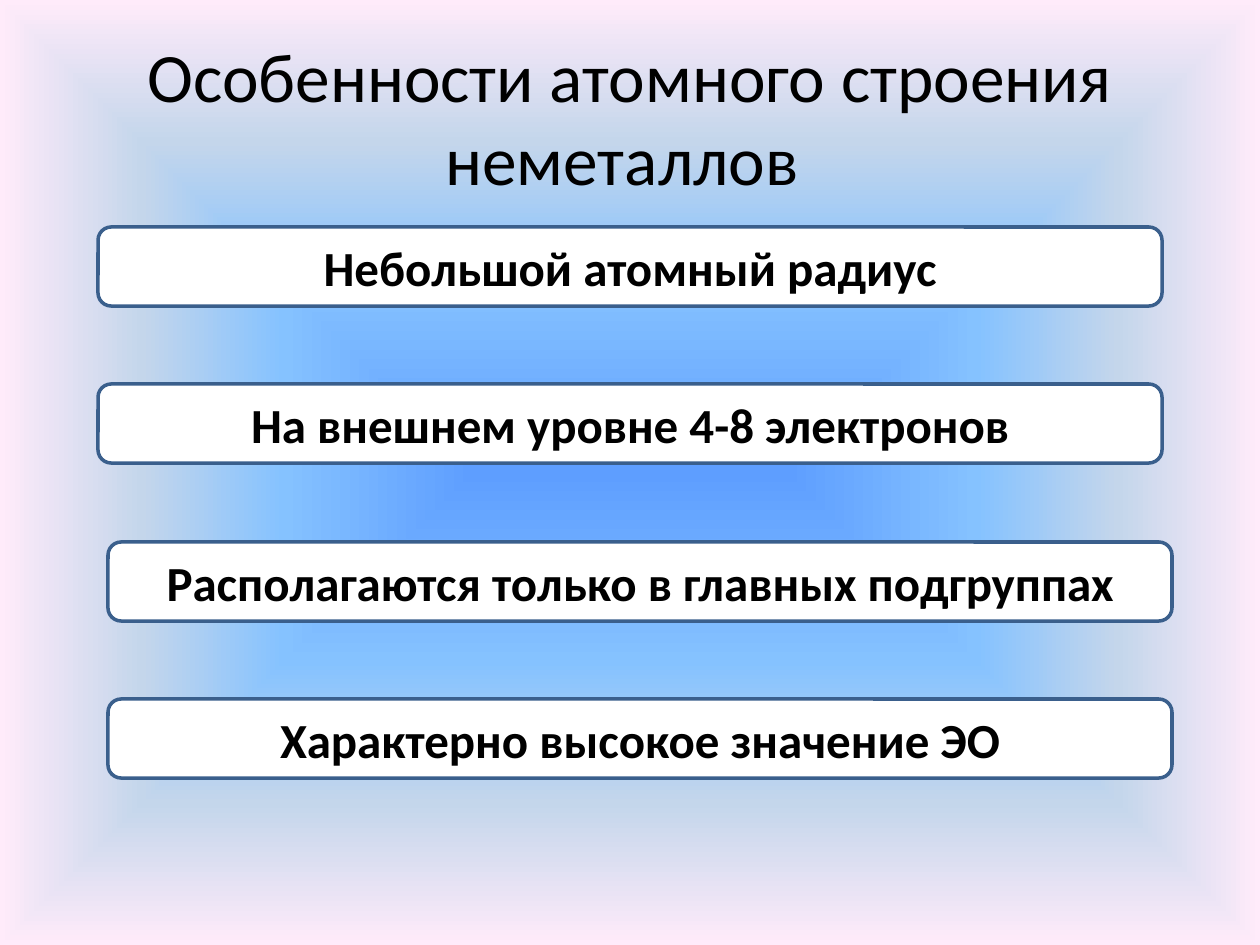
from pptx import Presentation
from pptx.dml.color import RGBColor
from pptx.enum.shapes import MSO_SHAPE
from pptx.enum.text import MSO_ANCHOR, MSO_AUTO_SIZE, PP_ALIGN
from pptx.oxml import parse_xml
from pptx.oxml.ns import nsdecls
from pptx.util import Pt

ROUND = MSO_SHAPE.ROUNDED_RECTANGLE
MIDDLE = MSO_ANCHOR.MIDDLE
FIXED = MSO_AUTO_SIZE.NONE
CENTER = PP_ALIGN.CENTER

SCALE = 914400 / 126
FONT = "Calibri"
COLORS = {"text": "000000", "card": "FFFFFF", "edge": "3A5F8C"}
STOPS = {0: "5E9EFF", 40: "85C2FF", 70: "C4D6EB", 100: "FFEBFA"}
TITLE = "Особенности атомного строения неметаллов "
CARDS = [
    (98, "Небольшой атомный радиус"),
    (98, "На внешнем уровне 4-8 электронов"),
    (108, "Располагаются только в главных подгруппах"),
    (108, "Характерно высокое значение ЭО"),
]


def px(count):
    return round(count * SCALE)


def color(name):
    return RGBColor.from_string(COLORS[name])


def set_text(shape, text, size, bold):
    frame = shape.text_frame
    frame.text = text
    frame.word_wrap = True
    frame.auto_size = FIXED
    frame.vertical_anchor = MIDDLE
    line = frame.paragraphs[0]
    line.alignment = CENTER
    line.font.name = FONT
    line.font.size = Pt(size)
    line.font.bold = bold
    line.font.color.rgb = color("text")


def set_back(slide):
    slide.background.fill.solid()
    props = slide.element.xpath("//p:bgPr")[0]
    stops = "".join(
        f'<a:gs pos="{place * 1000}"><a:srgbClr val="{tone}"/></a:gs>'
        for place, tone in STOPS.items()
    )
    blend = parse_xml(
        f'<a:gradFill {nsdecls("a")} rotWithShape="1"><a:gsLst>{stops}</a:gsLst>'
        '<a:path path="shape">'
        '<a:fillToRect l="50000" t="50000" r="50000" b="50000"/>'
        '</a:path></a:gradFill>'
    )
    props.replace(props[0], blend)


def add_title(slide):
    title = slide.shapes.title
    title.left, title.top = px(63), px(38)
    title.width, title.height = px(1134), px(157)
    set_text(title, TITLE, 39.6, False)


def add_card(slide, left, top, text):
    card = slide.shapes.add_shape(ROUND, px(left), px(top), px(1064), px(79))
    card.shadow.inherit = False
    card.fill.solid()
    card.fill.fore_color.rgb = color("card")
    card.line.color.rgb = color("edge")
    card.line.width = Pt(2)
    set_text(card, text, 28, True)


def main():
    deck = Presentation()
    deck.slide_width, deck.slide_height = px(1260), px(945)
    slide = deck.slides.add_slide(deck.slide_layouts[5])
    set_back(slide)
    add_title(slide)
    for row, (left, text) in enumerate(CARDS):
        add_card(slide, left, 227 + row * 315 // 2, text)
    deck.save("out.pptx")


if __name__ == "__main__":
    main()
